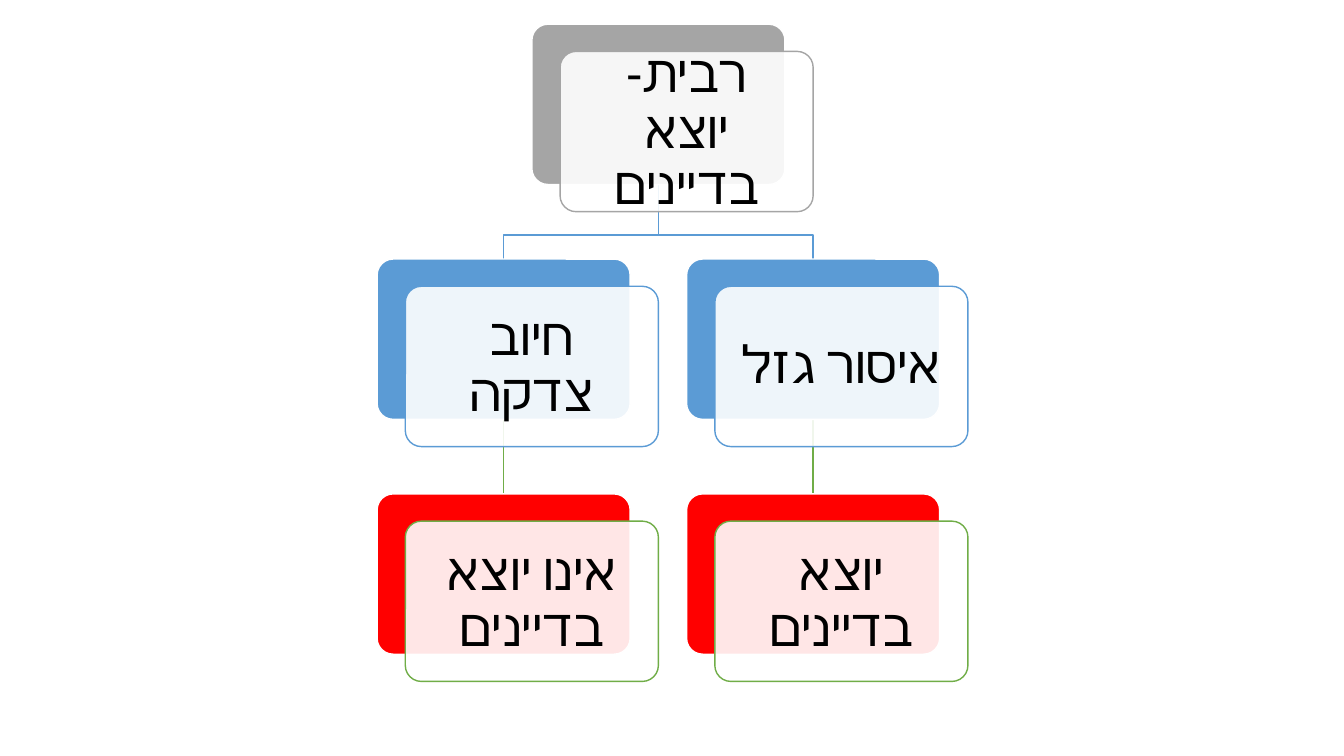
from lxml.etree import SubElement
from pptx import Presentation
from pptx.dml.color import RGBColor
from pptx.enum.shapes import MSO_CONNECTOR, MSO_SHAPE
from pptx.enum.text import MSO_ANCHOR, PP_ALIGN
from pptx.oxml.ns import qn
from pptx.util import Inches, Pt

WHITE = RGBColor(0xFF, 0xFF, 0xFF)
BLACK = RGBColor(0, 0, 0)
GRAY = RGBColor(0xA5, 0xA5, 0xA5)
BLUE = RGBColor(0x5B, 0x9B, 0xD5)
GREEN = RGBColor(0x70, 0xAD, 0x47)
RED = RGBColor(0xFF, 0, 0)

FONT = "Calibri"

# Grid of the tree: two columns, three levels; the root sits between the columns
TREE_LEFT, TREE_TOP = 3.74, 0.24
COLUMN_PITCH, LEVEL_PITCH = 3.07, 2.33
CARD_W, CARD_H = 2.51, 1.59
FRONT_DX, FRONT_DY = 0.28, 0.27
BEND = 0.5  # drop from the root card to the branching line

ROOT = "רבית- יוצא בדיינים"
BRANCHES = [
    (1, "איסור גזל", "יוצא בדיינים"),
    (0, "חיוב צדקה", "אינו יוצא בדיינים"),
]


def cell(column, level):
    """Left and top of a card in the tree grid."""
    return TREE_LEFT + column * COLUMN_PITCH, TREE_TOP + level * LEVEL_PITCH


def add_panel(slide, left, top, fill, line):
    panel = slide.shapes.add_shape(
        MSO_SHAPE.ROUNDED_RECTANGLE,
        Inches(left), Inches(top), Inches(CARD_W), Inches(CARD_H))
    panel.adjustments[0] = 0.1
    panel.shadow.inherit = False
    panel.fill.solid()
    panel.fill.fore_color.rgb = fill
    panel.line.color.rgb = line
    panel.line.width = Pt(1)
    return panel


def write_label(panel, label):
    frame = panel.text_frame
    frame.word_wrap = True
    frame.vertical_anchor = MSO_ANCHOR.MIDDLE
    frame.margin_left = frame.margin_right = Inches(0.15)
    frame.margin_top = frame.margin_bottom = Inches(0.15)
    paragraph = frame.paragraphs[0]
    paragraph.alignment = PP_ALIGN.CENTER
    paragraph.line_spacing = 0.9
    paragraph._p.get_or_add_pPr().set("rtl", "1")
    run = paragraph.add_run()
    run.text = label
    run.font.size = Pt(37)
    run.font.name = FONT
    run.font.color.rgb = BLACK
    # Hebrew takes its typeface from the complex-script font
    SubElement(run._r.get_or_add_rPr(), qn("a:cs")).set("typeface", FONT)


def add_card(slide, column, level, label, back_color, edge_color):
    """Coloured back panel with a translucent white label panel over it."""
    left, top = cell(column, level)
    back = add_panel(slide, left, top, back_color, WHITE)
    front = add_panel(slide, left + FRONT_DX, top + FRONT_DY, WHITE, edge_color)
    white = front.fill._xPr.find(qn("a:solidFill")).find(qn("a:srgbClr"))
    SubElement(white, qn("a:alpha")).set("val", "90000")
    write_label(front, label)
    return back


def add_branch_line(slide, column):
    """Bent line from the root card down to a card of the second level."""
    root_left, root_top = cell(0.5, 0)
    child_left, child_top = cell(column, 1)
    start_x, start_y = root_left + CARD_W / 2, root_top + CARD_H
    end_x = child_left + CARD_W / 2
    corners = [(start_x, start_y + BEND), (end_x, start_y + BEND), (end_x, child_top)]
    builder = slide.shapes.build_freeform(Inches(start_x), Inches(start_y))
    builder.add_line_segments([(Inches(x), Inches(y)) for x, y in corners], close=False)
    branch = builder.convert_to_shape()
    branch.shadow.inherit = False
    branch.fill.background()
    branch.line.color.rgb = BLUE
    branch.line.width = Pt(1)


def add_verdict_line(slide):
    """Straight line, joined to its two cards once they are placed."""
    link = slide.shapes.add_connector(MSO_CONNECTOR.STRAIGHT, 0, 0, 0, 0)
    link.line.color.rgb = GREEN
    link.line.width = Pt(1)
    SubElement(link._element.spPr, qn("a:effectLst"))
    return link


def add_tree(slide):
    # Lines lie behind all cards
    verdict_lines = []
    for column, _, _ in BRANCHES:
        verdict_lines.append(add_verdict_line(slide))
        add_branch_line(slide, column)

    # Root, then each branch with its verdict
    add_card(slide, 0.5, 0, ROOT, GRAY, GRAY)
    for (column, reason, verdict), link in zip(BRANCHES, verdict_lines):
        reason_card = add_card(slide, column, 1, reason, BLUE, BLUE)
        verdict_card = add_card(slide, column, 2, verdict, RED, GREEN)
        link.begin_connect(reason_card, 2)
        link.end_connect(verdict_card, 0)


def main():
    deck = Presentation()
    deck.slide_width, deck.slide_height = Inches(13.33), Inches(7.5)
    add_tree(deck.slides.add_slide(deck.slide_layouts[6]))
    deck.save("out.pptx")


if __name__ == "__main__":
    main()
